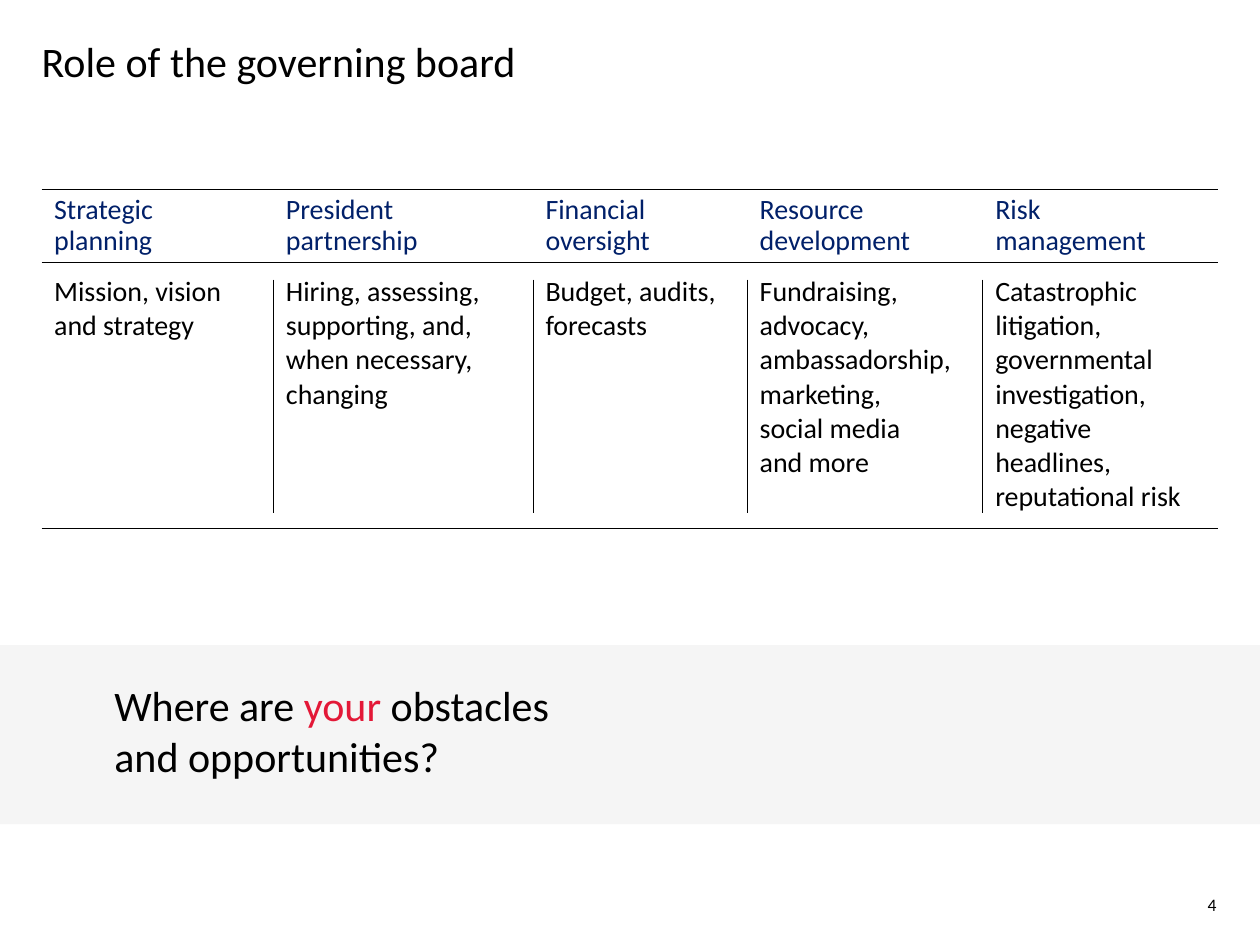
import itertools
import pptx
import pptx.util
import pptx.dml.color
import pptx.enum.shapes
import pptx.enum.text
import pptx.oxml
import pptx.oxml.ns

Inches = pptx.util.Inches
Pt = pptx.util.Pt
RGB = pptx.dml.color.RGBColor
Anchor = pptx.enum.text.MSO_ANCHOR
Align = pptx.enum.text.PP_ALIGN
BLACK = RGB(0x00, 0x00, 0x00)
NAVY = RGB(0x01, 0x20, 0x69)
RED = RGB(0xE3, 0x18, 0x37)
GREY = RGB(0xF5, 0xF5, 0xF5)
FONT = "Calibri"

TITLE = [("Role of the governing board", BLACK)]
ASK = [("Where are ", BLACK), ("your ", RED), ("obstacles \vand opportunities?", BLACK)]
PAGE = [("4", BLACK)]
ROLES = [
    ("Strategic \vplanning", "Mission, vision and strategy", 1.84),
    ("President\npartnership", "Hiring, assessing, supporting, and, when necessary, changing", 2.06),
    ("Financial oversight", "Budget, audits, forecasts", 1.70),
    ("Resource development",
     "Fundraising, advocacy, ambassadorship, marketing, \vsocial media \vand more", 1.87),
    ("Risk \vmanagement",
     "Catastrophic litigation, governmental investigation, \v"
     "negative headlines, reputational risk", 1.87),
]
LEFT, TOP = 0.33, 1.5
ROWS = [
    (0.58, NAVY, 0.9, {"vertical_anchor": Anchor.BOTTOM}),
    (2.11, BLACK, 1.0, {"vertical_anchor": Anchor.TOP,
                        "margin_top": Inches(0.1), "margin_bottom": Inches(0.15)}),
]
RULE = 0.5


def apply(item, form):
    for key, val in form.items():
        setattr(item, key, val)


def style(font, size, color):
    apply(font, {"name": FONT, "size": Pt(size)})
    font.color.rgb = color


def write(slide, box, runs, size, form, align=Align.LEFT):
    frame = slide.shapes.add_textbox(*map(Inches, box)).text_frame
    apply(frame, {"word_wrap": True, **form})
    para = frame.paragraphs[0]
    para.alignment = align
    for text, color in runs:
        for num, part in enumerate(text.split("\v")):
            if num:
                para.add_line_break()
            run = para.add_run()
            run.text = part
            style(run.font, size, color)


def border(cell):
    props = cell._tc.get_or_add_tcPr()
    solid = f'<a:solidFill><a:srgbClr val="{BLACK}"/></a:solidFill>'
    sides = [("lnL", "<a:noFill/>"), ("lnR", "<a:noFill/>"), ("lnT", solid), ("lnB", solid)]
    for num, (tag, fill) in enumerate(sides):
        props.insert(num, pptx.oxml.parse_xml(
            f'<a:{tag} {pptx.oxml.ns.nsdecls("a")} w="{int(Pt(RULE))}">{fill}</a:{tag}>'))


def fill_table(slide):
    width = sum(role[2] for role in ROLES)
    height = sum(row[0] for row in ROWS)
    table = slide.shapes.add_table(
        len(ROWS), len(ROLES), *map(Inches, (LEFT, TOP, width, height))).table
    apply(table, {"first_row": False, "horz_banding": False})
    for col, role in zip(table.columns, ROLES):
        col.width = Inches(role[2])
    for num, (tall, color, space, form) in enumerate(ROWS):
        table.rows[num].height = Inches(tall)
        for col, role in enumerate(ROLES):
            cell = table.cell(num, col)
            cell.text_frame.text = role[num]
            apply(cell, form)
            cell.fill.background()
            border(cell)
            for para in cell.text_frame.paragraphs:
                para.line_spacing = space
                style(para.font, 16, color)
                for run in para.runs:
                    style(run.font, 16, color)


def divide(slide):
    for edge in itertools.accumulate(role[2] for role in ROLES[:-1]):
        x = Inches(LEFT + edge)
        line = slide.shapes.add_connector(
            pptx.enum.shapes.MSO_CONNECTOR.STRAIGHT, x, Inches(2.22), x, Inches(4.07))
        line.line.color.rgb = BLACK
        line.line.width = Pt(RULE)
        line._element.spPr.append(pptx.oxml.parse_xml(
            f'<a:effectLst {pptx.oxml.ns.nsdecls("a")}/>'))


def main():
    deck = pptx.Presentation()
    apply(deck, {"slide_width": Inches(10), "slide_height": Inches(7.5)})
    slide = deck.slides.add_slide(deck.slide_layouts[6])
    write(slide, (LEFT, 0.23, 9.34, 0.78), TITLE, 24, {"margin_left": 0, "margin_right": 0})
    band = slide.shapes.add_shape(
        pptx.enum.shapes.MSO_SHAPE.RECTANGLE, *map(Inches, (0, 5.12, 10, 1.42)))
    band.shadow.inherit = False
    band.fill.solid()
    band.fill.fore_color.rgb = GREY
    band.line.fill.background()
    middle = {"vertical_anchor": Anchor.MIDDLE}
    write(slide, (0.81, 5.34, 8.43, 0.91), ASK, 24, middle)
    write(slide, (9.32, 7.05, 0.6, 0.25), PAGE, 10, middle, Align.CENTER)
    fill_table(slide)
    divide(slide)
    deck.save("out.pptx")


if __name__ == "__main__":
    main()
